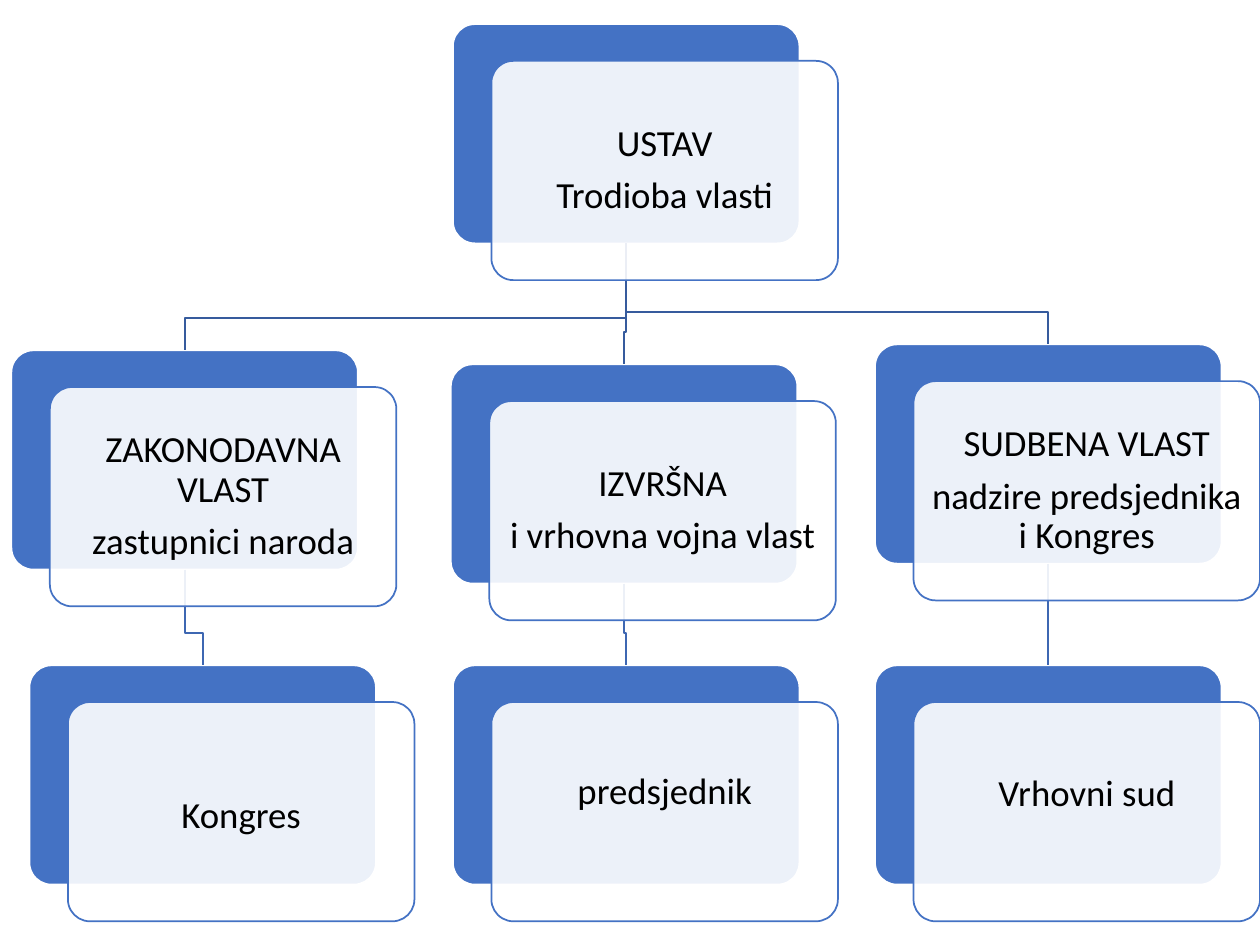
from dataclasses import dataclass

from lxml.etree import SubElement
from pptx import Presentation
from pptx.dml.color import RGBColor
from pptx.enum.shapes import MSO_CONNECTOR, MSO_SHAPE
from pptx.enum.text import MSO_ANCHOR, PP_ALIGN
from pptx.oxml.ns import qn
from pptx.util import Pt


@dataclass(frozen=True)
class Theme:
    accent: str = "4472C4"
    white: str = "FFFFFF"
    text: str = "000000"
    upper_link: str = "365B9D"
    lower_link: str = "3E67B2"
    font: str = "Calibri"
    size: float = 21
    line: float = 1
    front_alpha: int = 90


CARD_W, CARD_H = 198, 125.3
FRONT_DX, FRONT_DY = 22, 21
TEXT_PAD, INSET = 3.8, 6.5
BEND = 18.5

# name: (left, top, paragraphs, vertical text shift)
CARDS = {
    "constitution": (258.8, 13.8, ["USTAV", "Trodioba vlasti"], 0),
    "legislative": (6.5, 200.2, ["ZAKONODAVNA VLAST", "zastupnici naroda"], 0),
    "congress": (16.8, 380.2, ["Kongres"], 3),
    "executive": (257.6, 208.2, ["IZVRŠNA", "i vrhovna vojna vlast"], 0),
    "president": (258.8, 380.2, ["predsjednik"], -11),
    "judicial": (500, 196.8, ["SUDBENA VLAST", "nadzire predsjednika i Kongres"], 0),
    "court": (500, 380.2, ["Vrhovni sud"], -9.5),
}
BRANCHES = {"legislative": "congress", "executive": "president", "judicial": "court"}


class Deck:
    """Holds the theme and the current slide, and draws each kind of element."""

    def __init__(self, prs, theme):
        self.theme = theme
        self.s = prs.slides.add_slide(prs.slide_layouts[6])

    def apply(self, obj, fmt):
        for name, value in fmt.items():
            setattr(obj, name, value)

    def stroke(self, sp, color):
        sp.line.color.rgb = RGBColor.from_string(color)
        sp.line.width = Pt(self.theme.line)

    def card(self, x, y, fill, line, alpha=None):
        sp = self.s.shapes.add_shape(
            MSO_SHAPE.ROUNDED_RECTANGLE, Pt(x), Pt(y), Pt(CARD_W), Pt(CARD_H))
        sp.adjustments[0] = 0.1
        sp.shadow.inherit = False
        sp.fill.solid()
        sp.fill.fore_color.rgb = RGBColor.from_string(fill)
        if alpha is not None:
            clr = sp._element.spPr.find(qn("a:solidFill"))[0]
            SubElement(clr, qn("a:alpha"), val=str(alpha * 1000))
        self.stroke(sp, line)
        return sp

    def text(self, x, y, lines, shift):
        sp = self.s.shapes.add_textbox(
            Pt(x + TEXT_PAD), Pt(y + TEXT_PAD),
            Pt(CARD_W - 2 * TEXT_PAD), Pt(CARD_H - 2 * TEXT_PAD))
        tf = sp.text_frame
        self.apply(tf, {
            "word_wrap": True,
            "vertical_anchor": MSO_ANCHOR.MIDDLE,
            "margin_left": Pt(INSET),
            "margin_right": Pt(INSET),
            "margin_top": Pt(INSET + max(0, 2 * shift)),
            "margin_bottom": Pt(INSET + max(0, -2 * shift)),
        })
        for i, line in enumerate(lines):
            p = tf.add_paragraph() if i else tf.paragraphs[0]
            self.apply(p, {"alignment": PP_ALIGN.CENTER, "line_spacing": 0.9,
                           "space_after": Pt(7.35)})
            r = p.add_run()
            r.text = line
            self.apply(r.font, {"name": self.theme.font, "size": Pt(self.theme.size)})
            r.font.color.rgb = RGBColor.from_string(self.theme.text)

    def link(self, parent, child, color):
        x1, y1 = parent.left + parent.width // 2, parent.top + parent.height
        x2, y2 = child.left + child.width // 2, child.top
        if x1 == x2:
            sp = self.s.shapes.add_connector(MSO_CONNECTOR.STRAIGHT, x1, y1, x2, y2)
            sp.begin_connect(parent, 2)
            sp.end_connect(child, 0)
            self.stroke(sp, color)
            SubElement(sp._element.spPr, qn("a:effectLst"))
            return
        bend = y2 - Pt(BEND)
        fb = self.s.shapes.build_freeform(x1, y1)
        fb.add_line_segments([(x1, bend), (x2, bend), (x2, y2)], close=False)
        sp = fb.convert_to_shape()
        sp.shadow.inherit = False
        sp.fill.background()
        self.stroke(sp, color)


def main():
    prs = Presentation()
    prs.slide_width, prs.slide_height = Pt(720), Pt(540)
    theme = Theme()
    deck = Deck(prs, theme)
    backs = {name: deck.card(x, y, theme.accent, theme.white)
             for name, (x, y, _, _) in CARDS.items()}
    for branch, body in BRANCHES.items():
        deck.link(backs["constitution"], backs[branch], theme.upper_link)
        deck.link(backs[branch], backs[body], theme.lower_link)
    for x, y, lines, shift in CARDS.values():
        front = x + FRONT_DX, y + FRONT_DY
        deck.card(*front, theme.white, theme.accent, theme.front_alpha)
        deck.text(*front, lines, shift)
    prs.save("out.pptx")


if __name__ == "__main__":
    main()
